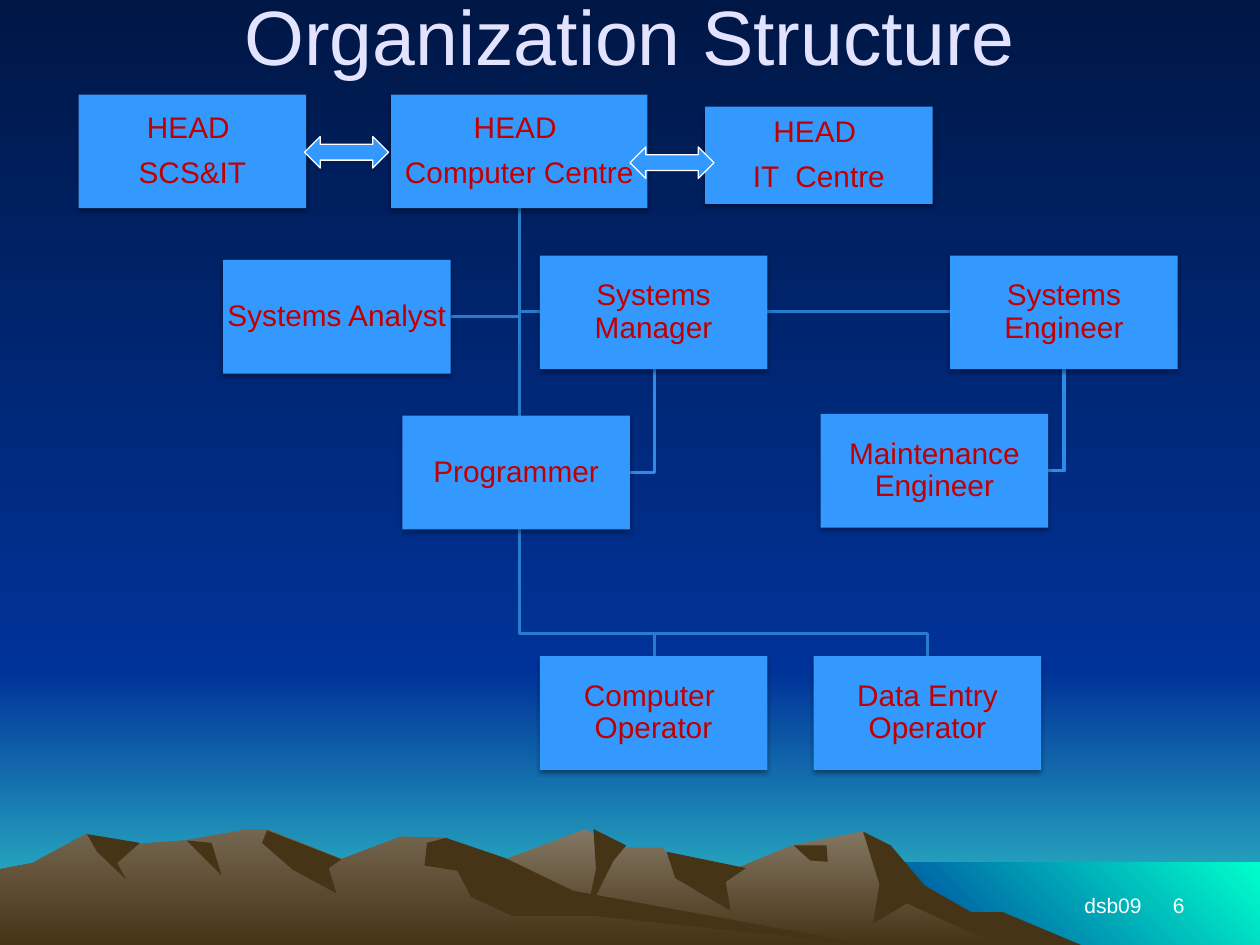
from lxml.etree import SubElement
from pptx import Presentation
from pptx.dml.color import RGBColor
from pptx.enum.shapes import MSO_SHAPE
from pptx.enum.text import MSO_ANCHOR, MSO_AUTO_SIZE, PP_ALIGN
from pptx.oxml.ns import qn
from pptx.util import Pt

COLORS = {
    "night": "001746", "blue": "003399", "horizon": "33CCCC", "sea": "00FFCC",
    "rock": "463416", "near rock": "746650", "far rock": "847864",
    "box": "3399FF", "label": "C00000", "title": "E3E3FF", "white": "FFFFFF",
    "line": "297BCC", "side line": "2E8BE7",
}

BOX_SIZE = (130, 65)
BOXES = {
    "scs": (["HEAD ", "SCS&IT"], 45, 54, *BOX_SIZE),
    "it": (["HEAD ", "IT  Centre"], 403, 61, 130, 55.5),
    "centre": (["HEAD ", "Computer Centre"], 223.5, 54, 146.5, 65),
    "operator": (["Computer  Operator"], 308.5, 375, *BOX_SIZE),
    "entry": (["Data Entry Operator"], 465, 375, *BOX_SIZE),
    "manager": (["Systems Manager"], 308.5, 146, *BOX_SIZE),
    "programmer": (["Programmer"], 230, 237.5, *BOX_SIZE),
    "engineer": (["Systems Engineer"], 543, 146, *BOX_SIZE),
    "maintenance": (["Maintenance Engineer"], 469, 236.5, *BOX_SIZE),
    "analyst": (["Systems Analyst"], 127.5, 148.5, *BOX_SIZE),
}
SIDE_LINKS = [
    ("centre", "analyst", "line"), ("engineer", "maintenance", "side line"),
    ("centre", "engineer", "line"), ("manager", "programmer", "side line"),
    ("centre", "manager", "line"),
]
DROP_LINKS = [("centre", "entry", "line"), ("centre", "operator", "line")]
DROP_GAP = 13.5
ARROWS = [(360, 84), (174, 78)]
FOOTERS = [("dsb09", 612, 48, PP_ALIGN.CENTER), ("6", 642, 42, PP_ALIGN.RIGHT)]

SKY_HEIGHT = 384
BACKDROPS = [
    (("blue", "horizon", 90), 0, SKY_HEIGHT),
    (("night", "blue", 90), 0, 0),
    (("blue", "sea", 315), 492, 493),
]
UNITS_PER_INCH = 100
FAR_RIDGE = [
    (821, 750), (764, 723), (723, 698), (685, 660), (629, 671), (566, 697),
    (536, 690), (526, 673), (486, 673), (465, 658), (394, 685), (258, 750),
]
NEAR_RIDGE = [
    (690, 750), (432, 712), (354, 665), (318, 664), (271, 682), (212, 658),
    (196, 658), (148, 667), (94, 671), (68, 662), (26, 685), (0, 690), (0, 750),
]
FAR_SHADOWS = [
    [(685, 660), (707, 671), (734, 703), (771, 724), (796, 724), (858, 750),
     (792, 750), (720, 717), (693, 733), (698, 702)],
    [(471, 658), (473, 690), (465, 727), (487, 683), (497, 671)],
    [(529, 676), (536, 697), (580, 723), (576, 700), (592, 689)],
    [(630, 671), (643, 683), (657, 684), (656, 671)],
]
NEAR_SHADOWS = [
    [(212, 659), (208, 669), (232, 690), (267, 709), (261, 689), (271, 682)],
    [(354, 665), (339, 669), (337, 687), (363, 691), (374, 712), (407, 727),
     (472, 727), (690, 750), (455, 707), (401, 681)],
    [(148, 667), (176, 695), (168, 669)],
    [(69, 662), (77, 676), (100, 698), (93, 685), (111, 669)],
]
MOUNTAINS = [("far rock", FAR_RIDGE, FAR_SHADOWS), ("near rock", NEAR_RIDGE, NEAR_SHADOWS)]


def color(name):
    return RGBColor.from_string(COLORS[name])


def paint(fill, first, last=None, clockwise=0):
    if last is None:
        fill.solid()
        fill.fore_color.rgb = color(first)
        return
    fill.gradient()
    fill.gradient_angle = 360 - clockwise
    for stop, name in zip(fill.gradient_stops, (first, last)):
        stop.color.rgb = color(name)


def add_preset(page, kind, left, top, width, height, *paints):
    shape = page.shapes.add_shape(kind, Pt(left), Pt(top), Pt(width), Pt(height))
    shape.shadow.inherit = False
    paint(shape.fill, *paints)
    shape.line.fill.background()
    return shape


def add_outline(page, points, scale, close):
    builder = page.shapes.build_freeform(*points[0], scale=scale)
    builder.add_line_segments(points[1:], close=close)
    shape = builder.convert_to_shape()
    shape.shadow.inherit = False
    return shape


def add_rock(page, points, *paints):
    shape = add_outline(page, points, Pt(72) / UNITS_PER_INCH, True)
    paint(shape.fill, *paints)
    shape.line.fill.background()


def add_scenery(page):
    paint(page.background.fill, "night", "blue", 90)
    for paints, left, top in BACKDROPS:
        height = 540 - top if top else SKY_HEIGHT
        add_preset(page, MSO_SHAPE.RECTANGLE, left, top, 720 - left, height, *paints)
    for name, ridge, shadows in MOUNTAINS:
        add_rock(page, ridge, name, "rock", 90)
        for points in shadows:
            add_rock(page, points, "rock")


def write(shape, lines, size, name, align, anchor):
    frame = shape.text_frame
    frame.word_wrap = True
    frame.auto_size = MSO_AUTO_SIZE.NONE
    frame.vertical_anchor = anchor
    frame.text = "\n".join(lines)
    for para in frame.paragraphs:
        para.alignment = align
        para.font.size = Pt(size)
        para.font.name = "Arial"
        para.font.color.rgb = color(name)
    return frame


def add_title(page):
    title = page.shapes.title
    page.shapes.element.append(title.element)
    title.left, title.top, title.width, title.height = Pt(36), Pt(0), Pt(648), Pt(40)
    frame = write(title, ["Organization Structure"], 44, "title", PP_ALIGN.CENTER, MSO_ANCHOR.MIDDLE)
    frame.margin_top = frame.margin_bottom = 0


def add_links(page):
    for parent, child, name in SIDE_LINKS + DROP_LINKS:
        _, left, top, width, height = BOXES[parent]
        x, y = left + width / 2, top + height
        _, left, top, width, height = BOXES[child]
        if (parent, child, name) in DROP_LINKS:
            middle, turn = left + width / 2, top - DROP_GAP
            route = [(x, y), (x, turn), (middle, turn), (middle, top)]
        else:
            middle = top + height / 2
            route = [(x, y), (x, middle), (left if left > x else left + width, middle)]
        link = add_outline(page, route, Pt(1), False)
        link.fill.background()
        link.line.color.rgb = color(name)
        link.line.width = Pt(2)


def add_shadow(shape):
    effects = shape.element.spPr.find(qn("a:effectLst"))
    shadow = SubElement(effects, qn("a:outerShdw"), blurRad=str(Pt(3.1)), dist=str(Pt(1.6)),
                        dir="5400000", rotWithShape="0")
    black = SubElement(shadow, qn("a:srgbClr"), val="000000")
    SubElement(black, qn("a:alpha"), val="38000")


def add_box(page, lines, *place):
    box = add_preset(page, MSO_SHAPE.RECTANGLE, *place, "box")
    add_shadow(box)
    frame = write(box, lines, 17, "label", PP_ALIGN.CENTER, MSO_ANCHOR.MIDDLE)
    frame.margin_left = frame.margin_right = frame.margin_top = frame.margin_bottom = Pt(0.9)
    for para in frame.paragraphs:
        para.line_spacing = 0.9
        para.space_after = Pt(7)


def main():
    deck = Presentation()
    deck.slide_width, deck.slide_height = Pt(720), Pt(540)
    page = deck.slides.add_slide(deck.slide_layouts.get_by_name("Title Only"))
    add_scenery(page)
    add_title(page)
    for text, left, width, align in FOOTERS:
        footer = page.shapes.add_textbox(Pt(left), Pt(492), Pt(width), Pt(36))
        write(footer, [text], 12, "white", align, MSO_ANCHOR.BOTTOM)
    add_links(page)
    for box in BOXES.values():
        add_box(page, *box)
    for left, top in ARROWS:
        arrow = add_preset(page, MSO_SHAPE.LEFT_RIGHT_ARROW, left, top, 48, 18, "box")
        arrow.line.color.rgb = color("white")
        arrow.line.width = Pt(0.75)
    deck.save("out.pptx")


if __name__ == "__main__":
    main()
